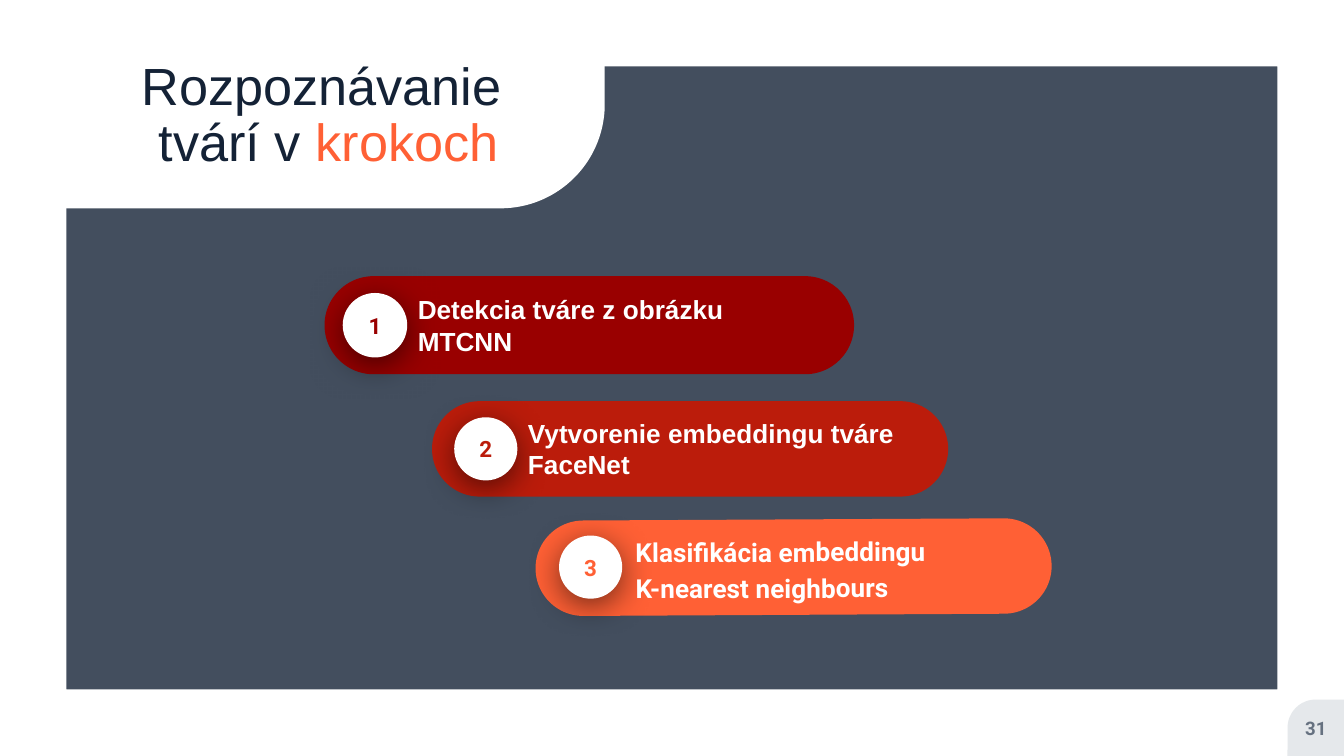
from dataclasses import dataclass
from typing import Any

from lxml import etree
from pptx import Presentation
from pptx import util as u
from pptx.dml.color import RGBColor
from pptx.enum import shapes, text
from pptx.oxml import ns

NAVY = RGBColor(0x14, 0x22, 0x36)
WHITE = RGBColor(0xFF, 0xFF, 0xFF)
MIST = RGBColor(0xE5, 0xE8, 0xEB)
GREY = RGBColor(0x66, 0x71, 0x80)
DARK_RED = RGBColor(0x99, 0x00, 0x00)
RED = RGBColor(0xBB, 0x1C, 0x0B)
ORANGE = RGBColor(0xFF, 0x60, 0x35)

COLS, ROWS = 100, 56.25
GEOM = shapes.MSO_SHAPE
LEFT, CENTER = text.PP_ALIGN.LEFT, text.PP_ALIGN.CENTER


@dataclass
class Deck:
    prs: Any
    slide: Any
    sans: str = "Arial"
    accent: str = "Roboto"

    def box(self, x, y, w, h):
        cw, rh = self.prs.slide_width / COLS, self.prs.slide_height / ROWS
        return [u.Emu(round(v)) for v in (x * cw, y * rh, w * cw, h * rh)]

    def shape(self, geom, area, color, adj=None, rot=0, flip=False, alpha=None):
        sp = self.slide.shapes.add_shape(geom, *self.box(*area))
        sp.shadow.inherit = False
        sp.fill.solid()
        sp.fill.fore_color.rgb = color
        sp.line.fill.background()
        sp.rotation = rot
        if adj is not None:
            sp.adjustments[0] = adj
        if flip:
            sp._element.spPr.find(ns.qn("a:xfrm")).set("flipH", "1")
        if alpha is not None:
            clr = sp._element.spPr.find(".//" + ns.qn("a:srgbClr"))
            etree.SubElement(clr, ns.qn("a:alpha"), val=str(alpha * 1000))
        return sp

    def drop_shadow(self, sp):
        effects = sp._element.spPr.find(ns.qn("a:effectLst"))
        shadow = etree.SubElement(
            effects, ns.qn("a:outerShdw"), blurRad=str(u.Pt(18)), dist=str(u.Pt(4)),
            dir="5400000", algn="bl", rotWithShape="0")
        clr = etree.SubElement(shadow, ns.qn("a:srgbClr"), val="000000")
        etree.SubElement(clr, ns.qn("a:alpha"), val="55000")

    def add_text(self, sp, paragraphs, size, font, bold=True, align=LEFT, spacing=None, inset=0.1):
        tf = sp.text_frame
        tf.word_wrap = True
        tf.vertical_anchor = text.MSO_ANCHOR.MIDDLE
        tf.margin_left = tf.margin_right = u.Inches(inset)
        tf.margin_top = tf.margin_bottom = u.Inches(inset)
        for i, lines in enumerate(paragraphs):
            p = tf.add_paragraph() if i else tf.paragraphs[0]
            p.alignment = align
            if spacing:
                p.line_spacing = spacing
            for j, runs in enumerate(lines):
                if j:
                    p.add_line_break()
                for words, color in runs:
                    r = p.add_run()
                    r.text = words
                    r.font.size = u.Pt(size)
                    r.font.name = font
                    r.font.bold = bold
                    r.font.color.rgb = color

    def label(self, area, paragraphs, size, font, rot=0, **style):
        sp = self.slide.shapes.add_textbox(*self.box(*area))
        sp.rotation = rot
        self.add_text(sp, paragraphs, size, font, **style)

    def step(self, number, color, pill, badge, label, paragraphs, font, tilt=0, spacing=None):
        x, middle, w, h = pill
        self.shape(GEOM.ROUNDED_RECTANGLE, (x, middle - h / 2, w, h), color, 0.5, tilt)
        x, size = badge
        sp = self.shape(GEOM.OVAL, (x, middle - size / 2, size, size), WHITE)
        self.drop_shadow(sp)
        self.add_text(sp, [[[(str(number), color)]]], 12, self.accent, align=CENTER)
        x, w = label
        self.label((x, middle - 2.5, w, 5), paragraphs, 14, font, tilt, spacing=spacing)


def main():
    prs = Presentation()
    prs.slide_width, prs.slide_height = u.Inches(10), u.Inches(5.625)
    s = Deck(prs, prs.slides.add_slide(prs.slide_layouts[6]))

    full, corner = (0, 0, COLS, ROWS), (COLS - 4.2, ROWS - 4.2, 4.2, 4.2)
    s.shape(GEOM.RECTANGLE, full, NAVY, alpha=80)
    s.shape(GEOM.FRAME, full, WHITE, 0.088)
    s.shape(GEOM.ROUND_1_RECTANGLE, (0, 0, 45, 15.5), WHITE, 0.5, 180, True)
    s.shape(GEOM.ROUND_1_RECTANGLE, corner, MIST, 0.5, flip=True)

    title = [[[("Rozpoznávanie ", NAVY)], [("tvárí v ", NAVY), ("krokoch", ORANGE)]]]
    s.label((5, 0.9, 38.9, 15.5), title, 28, s.sans,
            bold=False, align=CENTER, spacing=0.9, inset=0)
    s.label(corner, [[[("31", GREY)]]], 10, s.accent, align=CENTER, inset=0)

    s.step(1, DARK_RED, (24.15, 24.2, 39.4, 7.3), (25.5, 4.8), (30.1, 31.8),
           [[[("Detekcia tváre z obrázku", WHITE)], [("MTCNN", WHITE)]]], s.sans)
    s.step(2, RED, (32.15, 33.4, 38.4, 7.1), (33.8, 4.7), (38.3, 29.9),
           [[[("Vytvorenie embeddingu tváre", WHITE)], [("FaceNet", WHITE)]]], s.sans)
    s.step(3, ORANGE, (39.85, 42.2, 38.4, 7.1), (41.6, 4.7), (46.3, 32.3),
           [[[("Klasifikácia embeddingu", WHITE)]], [[("K-nearest neighbours", WHITE)]]],
           s.accent, -0.3, 1.15)

    prs.save("out.pptx")


if __name__ == "__main__":
    main()
